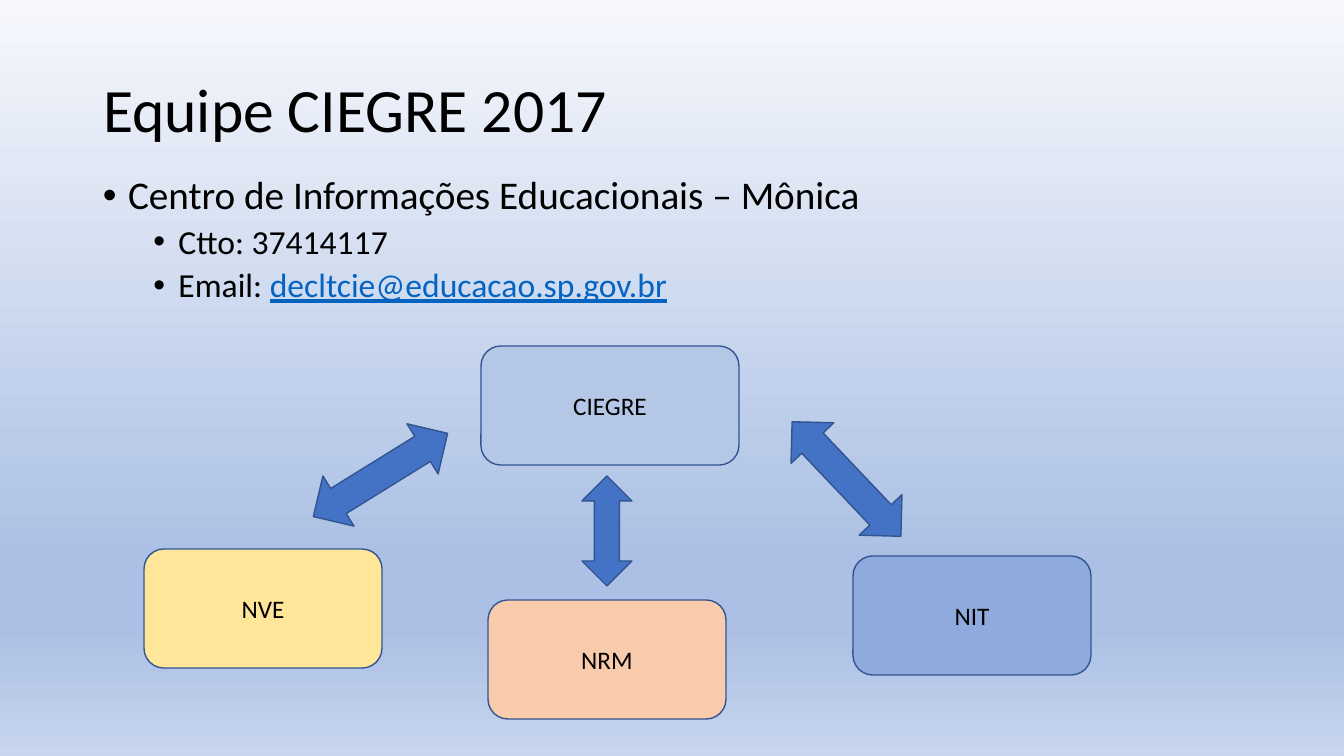
import pptx
import pptx.dml.color
import pptx.enum.shapes
import pptx.enum.text
import pptx.oxml
import pptx.oxml.ns
import pptx.util
import lxml.etree

PX = 914400 / 100.8
SHAPE = pptx.enum.shapes.MSO_SHAPE
ALIGN = pptx.enum.text.PP_ALIGN
ANCHOR = pptx.enum.text.MSO_ANCHOR
qn = pptx.oxml.ns.qn


def px(n):
    return pptx.util.Emu(round(n * PX))


def rgb(code):
    return pptx.dml.color.RGBColor.from_string(code)


def add_text(p, text, size=18, color="000000", underline=None, font="Calibri"):
    r = p.add_run()
    r.text = text
    r.font.name = font
    r.font.size = pptx.util.Pt(size)
    r.font.color.rgb = rgb(color)
    r.font.underline = underline
    return r


class Deck:
    line = "325491"
    arrow_fill = "4472C4"
    link = "0563C1"

    def __init__(self, width, height):
        self.prs = pptx.Presentation()
        self.prs.slide_width, self.prs.slide_height = px(width), px(height)
        self.s = self.prs.slides.add_slide(self.prs.slide_layouts[5])

    def background(self, stops):
        fill = self.s.background.fill
        fill.gradient()
        fill.gradient_angle = 270
        gs_list = self.s.element.find(".//" + qn("a:gsLst"))
        for gs in list(gs_list):
            gs_list.remove(gs)
        for percent, color in stops:
            gs = lxml.etree.SubElement(gs_list, qn("a:gs"), pos=str(percent * 1000))
            lxml.etree.SubElement(gs, qn("a:srgbClr"), val=color)

    def title(self, text, x, y, w, h):
        sp = self.s.shapes.title
        sp.left, sp.top, sp.width, sp.height = px(x), px(y), px(w), px(h)
        tf = sp.text_frame
        tf.vertical_anchor = ANCHOR.MIDDLE
        p = tf.paragraphs[0]
        p.alignment = ALIGN.LEFT
        p.line_spacing = 0.9
        add_text(p, text, size=44)

    def bullets(self, items, x, y, w, h):
        tf = self.s.shapes.add_textbox(px(x), px(y), px(w), px(h)).text_frame
        tf.word_wrap = True
        for i, (level, text, address) in enumerate(items):
            p = tf.paragraphs[0] if i == 0 else tf.add_paragraph()
            p.level = level
            p.line_spacing = 0.9
            p.space_before = pptx.util.Pt(5 if level else 10)
            size = 24 if level else 28
            add_text(p, text, size=size)
            if address:
                add_text(p, address, size=size, color=self.link, underline=True)
            # Hanging bullet
            pPr = p._p.get_or_add_pPr()
            pPr.set("marL", str(pptx.util.Inches(0.25 + 0.5 * level)))
            pPr.set("indent", str(-pptx.util.Inches(0.25)))
            lxml.etree.SubElement(pPr, qn("a:buFont"), typeface="Arial")
            lxml.etree.SubElement(pPr, qn("a:buChar"), char="•")

    def shape(self, kind, x, y, w, h, fill):
        sp = self.s.shapes.add_shape(kind, px(x), px(y), px(w), px(h))
        sp.shadow.inherit = False
        sp.fill.solid()
        sp.fill.fore_color.rgb = rgb(fill)
        sp.line.color.rgb = rgb(self.line)
        sp.line.width = pptx.util.Pt(1)
        return sp

    def box(self, text, x, y, w, fill):
        sp = self.shape(SHAPE.ROUNDED_RECTANGLE, x, y, w, 119, fill)
        tf = sp.text_frame
        tf.vertical_anchor = ANCHOR.MIDDLE
        p = tf.paragraphs[0]
        p.alignment = ALIGN.CENTER
        add_text(p, text)

    def arrow(self, x, y, w, h, angle=0):
        sp = self.shape(SHAPE.UP_DOWN_ARROW, x, y, w, h, self.arrow_fill)
        sp.rotation = angle


def main():
    deck = Deck(1344, 756)
    deck.background([(0, "F6F8FC"), (74, "ABC0E4"), (83, "ABC0E4"), (100, "C7D5ED")])

    # Heading and contact details
    deck.title("Equipe CIEGRE 2017", 93, 40, 1159, 146)
    deck.bullets([
        (0, "Centro de Informações Educacionais – Mônica", None),
        (1, "Ctto: 37414117", None),
        (1, "Email: ", "decltcie@educacao.sp.gov.br"),
    ], 93, 171, 1208, 561)

    # Teams
    for text, x, y, w, fill in [
        ("NVE", 144, 549, 238, "FFE699"),
        ("NRM", 488, 600, 238, "F8CBAD"),
        ("NIT", 853, 556, 238, "8FAADC"),
        ("CIEGRE", 481, 346, 258, "B4C7E7"),
    ]:
        deck.box(text, x, y, w, fill)

    # Links between the centre and its teams
    deck.arrow(351, 396, 59, 158, angle=58.2)
    deck.arrow(817, 400, 59, 158, angle=316.5)
    deck.arrow(582, 476, 50, 110)

    deck.prs.save("out.pptx")


if __name__ == "__main__":
    main()
